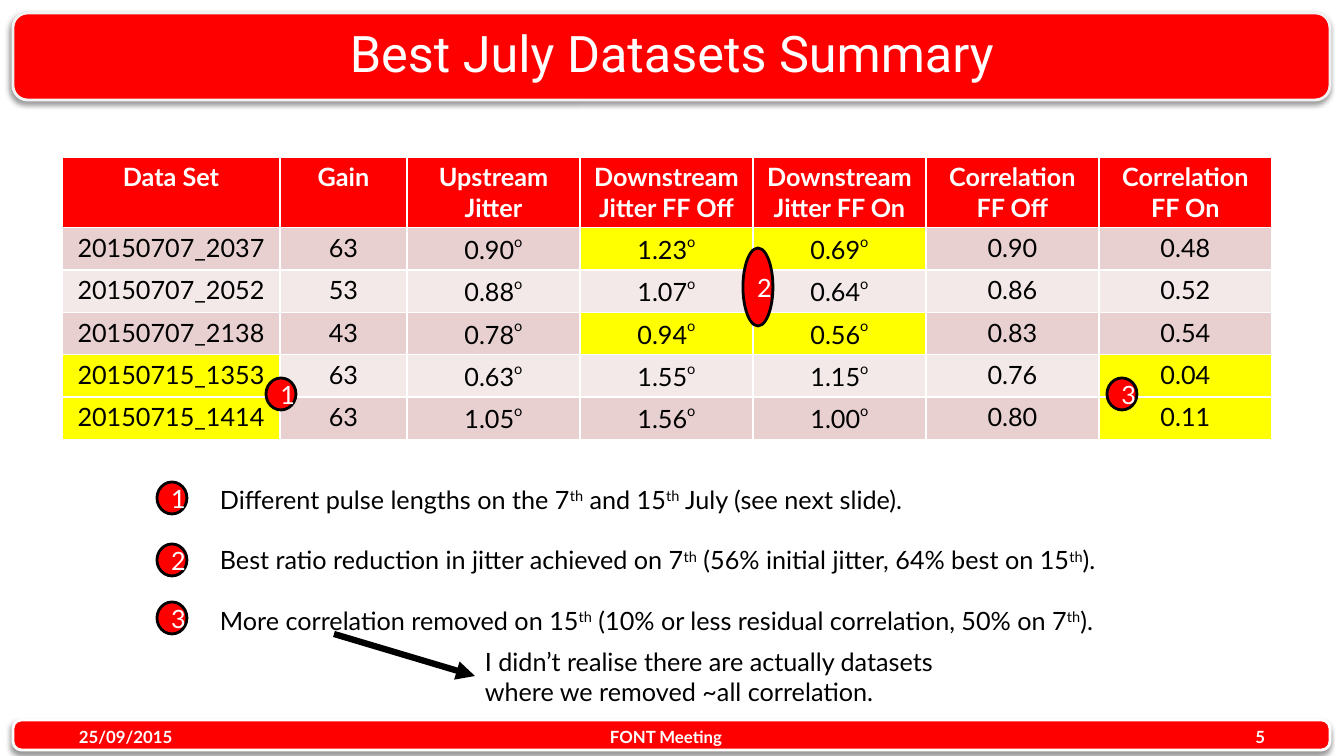
from lxml import etree
from pptx import Presentation
from pptx.dml.color import RGBColor
from pptx.enum.shapes import MSO_CONNECTOR as Connector, MSO_SHAPE as Shape
from pptx.enum.text import MSO_ANCHOR as Anchor, PP_ALIGN as Align
from pptx.oxml import parse_xml
from pptx.oxml.ns import nsdecls, qn
from pptx.util import Pt

# Text between a pair of ^ marks is raised.
TITLE = "Best July Datasets Summary"
HEADINGS = ["Data Set", "Gain", "Upstream Jitter", "Downstream Jitter FF Off",
            "Downstream Jitter FF On", "Correlation FF Off", "Correlation FF On"]
DATASETS = [
    ["20150707_2037", "63", "0.90", "1.23", "0.69", "0.90", "0.48"],
    ["20150707_2052", "53", "0.88", "1.07", "0.64", "0.86", "0.52"],
    ["20150707_2138", "43", "0.78", "0.94", "0.56", "0.83", "0.54"],
    ["20150715_1353", "63", "0.63", "1.55", "1.15", "0.76", "0.04"],
    ["20150715_1414", "63", "1.05", "1.56", "1.00", "0.80", "0.11"],
]
JITTER_COLUMNS = {2, 3, 4}
HIGHLIGHTS = {(1, 3), (1, 4), (3, 3), (3, 4), (4, 0), (5, 0), (4, 6), (5, 6)}
NOTES = [
    "Different pulse lengths on the 7^th^ and 15^th^ July (see next slide).",
    "Best ratio reduction in jitter achieved on 7^th^ (56% initial jitter, 64% best on 15^th^).",
    "More correlation removed on 15^th^ (10% or less residual correlation, 50% on 7^th^).",
]
REMARK = "I didn’t realise there are actually datasets where we removed ~all correlation."

# Lengths in px: left, top, width, height
TITLE_BOX = (5, 5, 1334, 95)
TITLE_BAR, FOOTER_BAR = (13, 13, 1317, 87), (13, 720, 1317, 30)
FOOTERS = [("25/09/2015", 69, 158, Align.LEFT),
           ("FONT Meeting", 386, 560, Align.CENTER),
           ("5", 1000, 275, Align.RIGHT)]
FOOTER_TOP, FOOTER_HEIGHT = 722, 30
TABLE_BOX = (62, 157, 1210, 275)
COLUMN_WIDTHS = [218, 127] + [173] * 5
ROW_HEIGHT = 41
BADGE_WIDTH = 30
BADGES = [("1", 266, 378, 32), ("3", 1107, 378, 32), ("2", 743, 248, 78),
          ("1", 157, 482, 32), ("2", 157, 544, 32), ("3", 157, 602, 32)]
NOTES_BOX = (210, 479, 950, 163)
REMARK_BOX = (475, 641, 511, 72)
ARROW = (334, 634, 475, 676)


class Theme:
    red, white, black = "FF0000", "FFFFFF", "000000"
    bar_edge, highlight = "F2F2F2", "FFFF00"
    bands = ("F4E9E9", "E8D0D0")
    heading_font, body_font = "Roboto", "Lato"
    title_size, body_size, footer_size = 36, 18, 12
    note_gap = 21.6


def px(*lengths):
    return [round(length * 914400 / 100.8) for length in lengths]


def rgb(code):
    return RGBColor.from_string(code)


def write(frame, *texts, size=Theme.body_size, font=Theme.body_font, color=Theme.black,
          bold=False, align=Align.LEFT, gap=0, rise=30):
    for index, text in enumerate(texts):
        para = frame.add_paragraph() if index else frame.paragraphs[0]
        para.alignment = align
        if index:
            para.space_before = Pt(gap)
        for part, piece in enumerate(text.split("^")):
            if not piece:
                continue
            span = para.add_run()
            span.text = piece
            span.font.size, span.font.name, span.font.bold = Pt(size), font, bold
            span.font.color.rgb = rgb(color)
            if part % 2:
                span.font._element.set("baseline", str(rise * 1000))


def add_text(page, place, *texts, anchor=Anchor.TOP, **style):
    box = page.shapes.add_textbox(*px(*place))
    box.text_frame.word_wrap = True
    box.text_frame.vertical_anchor = anchor
    write(box.text_frame, *texts, **style)


def add_red_shape(page, kind, place, edge):
    shape = page.shapes.add_shape(kind, *px(*place))
    shape.shadow.inherit = False
    shape.fill.solid()
    shape.fill.fore_color.rgb = rgb(Theme.red)
    shape.line.color.rgb = rgb(edge)
    shape.line.width = Pt(2)
    return shape


def add_bar(page, place, edge):
    """Add a rounded bar with a soft shadow falling to the lower left."""
    bar = add_red_shape(page, Shape.ROUNDED_RECTANGLE, place, edge)
    effects = bar._element.spPr.find(qn("a:effectLst"))
    effects.append(parse_xml(
        f'<a:outerShdw {nsdecls("a")} blurRad="{Pt(4)}" dist="{Pt(3)}" dir="8100000" '
        f'algn="tr" rotWithShape="0"><a:srgbClr val="{Theme.black}">'
        '<a:alpha val="40000"/></a:srgbClr></a:outerShdw>'))
    return bar


def add_results(page):
    rows = [HEADINGS] + DATASETS
    frame = page.shapes.add_table(len(rows), len(HEADINGS), *px(*TABLE_BOX))
    table = frame.table
    for column, width in zip(table.columns, COLUMN_WIDTHS):
        column.width = px(width)[0]
    for row_index, values in enumerate(rows):
        table.rows[row_index].height = px(ROW_HEIGHT)[0]
        heading = row_index == 0
        for column_index, value in enumerate(values):
            if heading:
                fill = Theme.red
            elif (row_index, column_index) in HIGHLIGHTS:
                fill = Theme.highlight
            else:
                fill = Theme.bands[row_index % 2]
            if not heading and column_index in JITTER_COLUMNS:
                value += "^o^"
            cell = table.cell(row_index, column_index)
            cell.fill.solid()
            cell.fill.fore_color.rgb = rgb(fill)
            write(cell.text_frame, value, bold=heading, align=Align.CENTER, rise=50,
                  color=Theme.white if heading else Theme.black)
    frame.height = px(TABLE_BOX[3])[0]


def add_badge(page, label, left, top, height):
    badge = add_red_shape(page, Shape.OVAL, (left, top, BADGE_WIDTH, height), Theme.black)
    badge.text_frame.vertical_anchor = Anchor.MIDDLE
    write(badge.text_frame, label, color=Theme.white, align=Align.CENTER)


def add_arrow(page):
    arrow = page.shapes.add_connector(Connector.STRAIGHT, *px(*ARROW))
    arrow.line.color.rgb = rgb(Theme.black)
    arrow.line.width = Pt(4.5)
    etree.SubElement(arrow.line._get_or_add_ln(), qn("a:tailEnd"), type="triangle")
    etree.SubElement(arrow._element.spPr, qn("a:effectLst"))


def main():
    deck = Presentation()
    deck.slide_width, deck.slide_height = px(1344, 756)
    page = deck.slides.add_slide(deck.slide_layouts[6])

    add_bar(page, FOOTER_BAR, Theme.white).adjustments[0] = 0.28
    add_bar(page, TITLE_BAR, Theme.bar_edge)
    add_text(page, TITLE_BOX, TITLE, anchor=Anchor.MIDDLE, align=Align.CENTER,
             size=Theme.title_size, font=Theme.heading_font, color=Theme.white)
    add_results(page)
    for text, left, width, align in FOOTERS:
        add_text(page, (left, FOOTER_TOP, width, FOOTER_HEIGHT), text, anchor=Anchor.MIDDLE,
                 size=Theme.footer_size, color=Theme.white, bold=True, align=align)
    for badge in BADGES:
        add_badge(page, *badge)
    add_text(page, NOTES_BOX, *NOTES, gap=Theme.note_gap)
    add_text(page, REMARK_BOX, REMARK)
    add_arrow(page)
    deck.save("out.pptx")


if __name__ == "__main__":
    main()
